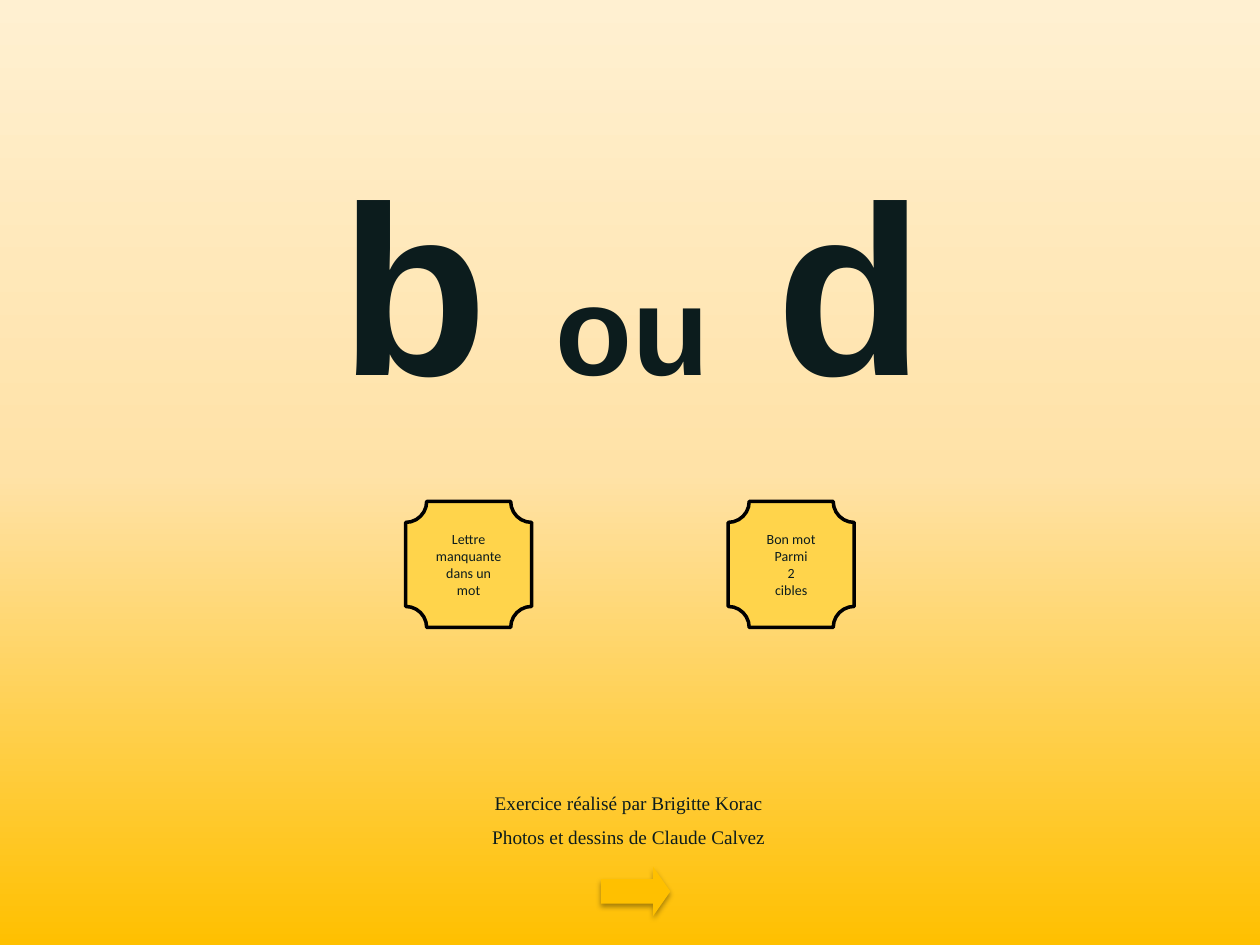
from copy import deepcopy

from lxml import etree
from pptx import Presentation
from pptx.dml.color import RGBColor
from pptx.enum.shapes import MSO_SHAPE
from pptx.enum.text import MSO_ANCHOR, MSO_AUTO_SIZE, PP_ALIGN
from pptx.oxml.ns import nsdecls, qn
from pptx.util import Inches, Pt

CENTER = PP_ALIGN.CENTER
TOP, MIDDLE = MSO_ANCHOR.TOP, MSO_ANCHOR.MIDDLE
FIT_SHAPE = MSO_AUTO_SIZE.SHAPE_TO_FIT_TEXT
PLAQUE, RIGHT_ARROW = MSO_SHAPE.PLAQUE, MSO_SHAPE.RIGHT_ARROW

COLORS = {
    "text": "0C1C1D",
    "cream": "FFF0D1",
    "sand": "FFE2A7",
    "amber": "FFC000",
    "plaque": "FFD44B",
    "outline": "000000",
}


def rgb(name):
    return RGBColor.from_string(COLORS[name])


def format_run(r, size, font, bold=False):
    r.font.size = Pt(size)
    r.font.name = font
    r.font.bold = bold
    r.font.color.rgb = rgb("text")


def place(sp, left, top, width, height):
    sp.left, sp.top = Inches(left), Inches(top)
    sp.width, sp.height = Inches(width), Inches(height)
    tf = sp.text_frame
    tf.vertical_anchor = TOP
    tf.auto_size = FIT_SHAPE
    return tf


def set_background(s):
    fill = s.background.fill
    fill.gradient()
    fill.gradient_angle = 270
    stops = s.element.find(".//" + qn("a:gsLst"))
    stops.insert(1, deepcopy(stops[0]))
    for stop, name, pos in zip(fill.gradient_stops, ("cream", "sand", "amber"), (0, 0.5, 1)):
        stop.color.rgb = rgb(name)
        stop.position = pos


def add_title(s):
    tf = place(s.shapes.title, 2.58, 1.01, 4.88, 2.42)
    tf.word_wrap = False
    p = tf.paragraphs[0]
    p.alignment = CENTER
    for text, size in (("b ", 138), ("ou", 72), (" d", 138)):
        r = p.add_run()
        r.text = text
        format_run(r, size, "Arial", True)


def add_credits(s):
    tf = place(s.placeholders[1], 1.8, 6.23, 6.38, 0.56)
    tf.word_wrap = True
    tf.text = "Exercice réalisé par Brigitte Korac\nPhotos et dessins de Claude Calvez"
    for p in tf.paragraphs:
        p.alignment = CENTER
        p.space_before = Pt(6)
        format_run(p.runs[0], 11, "Times New Roman")


def add_plaque(s, left, text):
    sp = s.shapes.add_shape(PLAQUE, Inches(left), Inches(3.98), Inches(1), Inches(1))
    sp.shadow.inherit = False
    sp.fill.solid()
    sp.fill.fore_color.rgb = rgb("plaque")
    sp.line.color.rgb = rgb("outline")
    sp.line.width = Pt(2)
    tf = sp.text_frame
    tf.word_wrap = True
    tf.vertical_anchor = MIDDLE
    tf.text = text
    for p in tf.paragraphs:
        p.alignment = CENTER
        format_run(p.runs[0], 8, "Calibri")


def add_arrow(s):
    sp = s.shapes.add_shape(RIGHT_ARROW, Inches(4.77), Inches(6.88), Inches(0.55), Inches(0.39))
    sp.adjustments[1] = 0.35
    sp.fill.solid()
    sp.fill.fore_color.rgb = rgb("amber")
    sp.line.fill.background()
    sp.shadow.inherit = False
    effects = sp.element.spPr.find(qn("a:effectLst"))
    effects.append(etree.fromstring(
        f'<a:outerShdw {nsdecls("a")} blurRad="{Pt(3.1)}" dist="{Pt(1.8)}" dir="5400000" '
        f'rotWithShape="0"><a:srgbClr val="{COLORS["outline"]}">'
        '<a:alpha val="35000"/></a:srgbClr></a:outerShdw>'
    ))


def main():
    prs = Presentation()
    prs.slide_width, prs.slide_height = Inches(10), Inches(7.5)
    s = prs.slides.add_slide(prs.slide_layouts[0])
    set_background(s)
    add_credits(s)
    add_title(s)
    add_arrow(s)
    add_plaque(s, 3.22, "Lettre manquante dans un mot")
    add_plaque(s, 5.78, "Bon mot\nParmi\n2\ncibles")
    prs.save("out.pptx")


if __name__ == "__main__":
    main()
